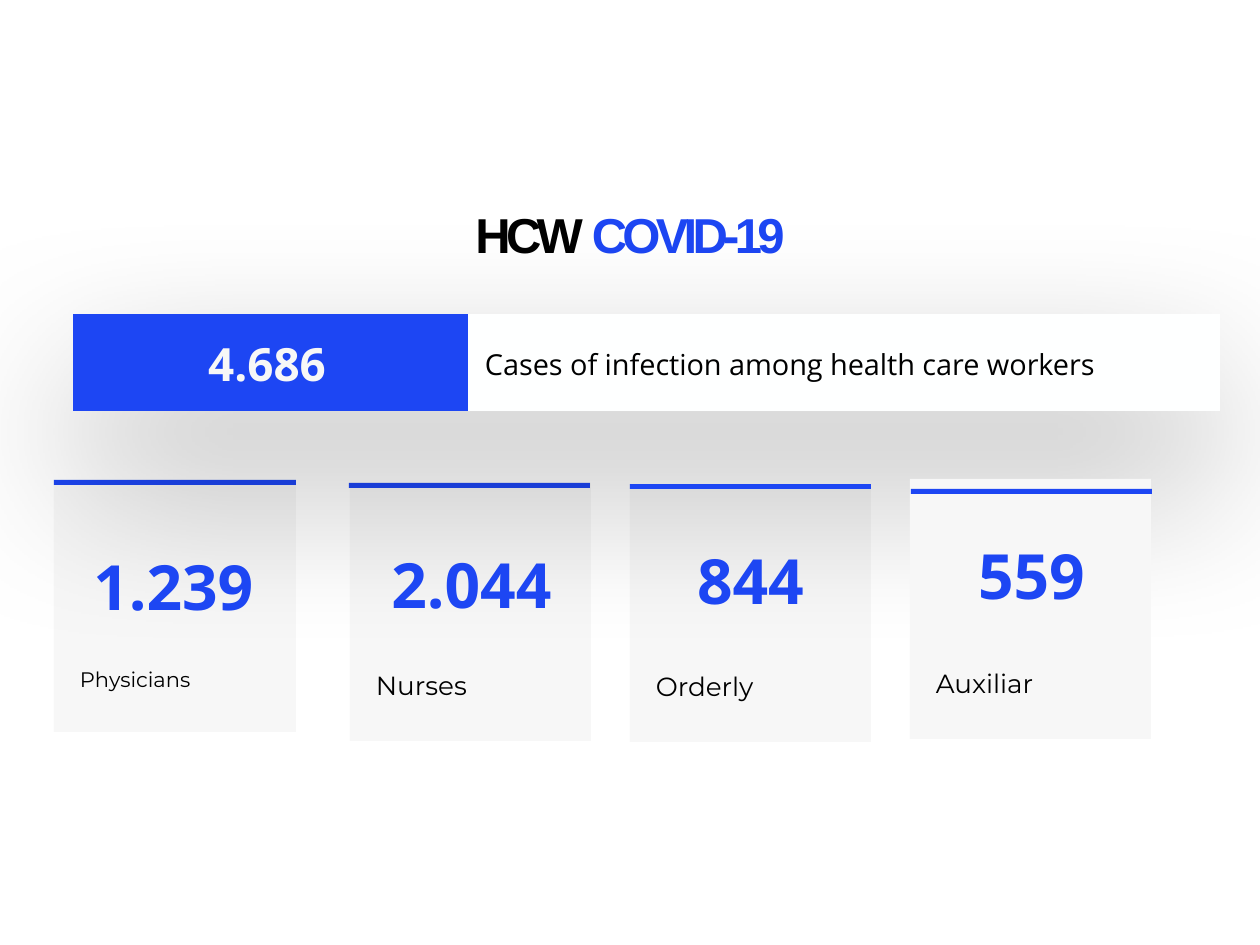
from collections import namedtuple
from dataclasses import dataclass

from lxml.etree import SubElement
from pptx import Presentation
from pptx.dml.color import RGBColor
from pptx.enum.shapes import MSO_SHAPE
from pptx.enum.text import MSO_ANCHOR, PP_ALIGN
from pptx.oxml.ns import qn
from pptx.util import Emu, Pt

PX = 914400 // 126


@dataclass(frozen=True)
class Theme:
    blue: str = "1D46F3"
    black: str = "000000"
    panel: str = "F7F7F7"
    banner: str = "FEFFFF"
    title_font: str = "Arial"
    label_font: str = "Montserrat"
    body_font: str = "Open Sans"
    title_size: float = 28
    total_size: float = 26.2
    caption_size: float = 16.5
    number_size: float = 35.6


theme = Theme()
Card = namedtuple("Card", "label number size left top width height bar_left bar_top number_left number_top")
cards = [
    Card("Physicians", "1.239", 12, 54, 480, 242, 252, 54, 480, 53, 543),
    Card("Nurses", "2.044", 15, 350, 483, 241, 258, 349, 483, 351, 541),
    Card("Orderly", "844", 15, 630, 484, 241, 258, 630, 484, 630, 537),
    Card("Auxiliar", "559", 15, 910, 479, 241, 260, 911, 489, 911, 532),
]

prs = Presentation()
prs.slide_width, prs.slide_height = Emu(1260 * PX), Emu(945 * PX)
slide = prs.slides.add_slide(prs.slide_layouts[5])


def add_block(left, top, width, height, fill=None, text="", font=theme.body_font, size=12,
              color=theme.black, bold=False, align=PP_ALIGN.LEFT,
              anchor=MSO_ANCHOR.MIDDLE, insets=(5, 5, 5, 5)):
    bounds = [Emu(length * PX) for length in (left, top, width, height)]
    if fill:
        block = slide.shapes.add_shape(MSO_SHAPE.RECTANGLE, *bounds)
        block.shadow.inherit = False
        block.fill.solid()
        block.fill.fore_color.rgb = RGBColor.from_string(fill)
        block.line.fill.background()
    else:
        block = slide.shapes.add_textbox(*bounds)
    if text:
        frame = block.text_frame
        frame.word_wrap = True
        frame.vertical_anchor = anchor
        (frame.margin_left, frame.margin_top,
         frame.margin_right, frame.margin_bottom) = [Emu(inset * PX) for inset in insets]
        frame.paragraphs[0].alignment = align
        run = frame.paragraphs[0].add_run()
        run.text = text
        run.font.name, run.font.size, run.font.bold = font, Pt(size), bold
        run.font.color.rgb = RGBColor.from_string(color)
    return block


def add_cards(panels, bars):
    for card in panels:
        panel = add_block(card.left, card.top, card.width, card.height, theme.panel, card.label,
                          theme.label_font, card.size, anchor=MSO_ANCHOR.BOTTOM,
                          insets=(26, 34, 19, 40))
        label = panel.text_frame.paragraphs[0]
        label.line_spacing, label.space_before = 1.3, Pt(7.5)
    for card in bars:
        add_block(card.bar_left, card.bar_top, card.width, 5, theme.blue)


# Cards that lie under the banner's shadow
add_cards(cards[:3], cards[:2])

# Title
title = slide.shapes.title
title.left, title.top, title.width, title.height = [Emu(n * PX) for n in (0, 185, 1260, 97)]
heading = title.text_frame
heading.word_wrap = True
heading.vertical_anchor = MSO_ANCHOR.MIDDLE
heading.margin_left = heading.margin_right = Emu(8 * PX)
heading.margin_top = heading.margin_bottom = Emu(8 * PX)
heading.paragraphs[0].alignment = PP_ALIGN.CENTER
for words, color in (("HCW ", theme.black), ("COVID-19", theme.blue)):
    run = heading.paragraphs[0].add_run()
    run.text = words
    run.font.name, run.font.size, run.font.bold = theme.title_font, Pt(theme.title_size), True
    run.font.color.rgb = RGBColor.from_string(color)
    run.font._element.set("spc", "-270")

# Banner with its soft shadow
banner = add_block(73, 314, 1147, 97, theme.banner)
effects = banner._element.spPr.find(qn("a:effectLst"))
shadow = SubElement(effects, qn("a:outerShdw"), blurRad=str(Pt(100)), dist=str(Pt(40)),
                    dir="5400000", rotWithShape="0")
shade = SubElement(shadow, qn("a:srgbClr"), val=theme.black)
SubElement(shade, qn("a:alpha"), val="30000")
add_block(480, 342, 745, 44, text="Cases of infection among health care workers",
          size=theme.caption_size)
add_block(73, 314, 395, 97, theme.blue)
add_block(73, 330, 388, 66, text="4.686", size=theme.total_size, color=theme.panel,
          bold=True, align=PP_ALIGN.CENTER)

# Card and bars that lie over the shadow
add_cards(cards[3:], cards[2:])

# Numbers on the cards
for card in cards:
    add_block(card.number_left, card.number_top, 241, 86, text=card.number,
              size=theme.number_size, color=theme.blue, bold=True, align=PP_ALIGN.CENTER)

prs.save("out.pptx")
